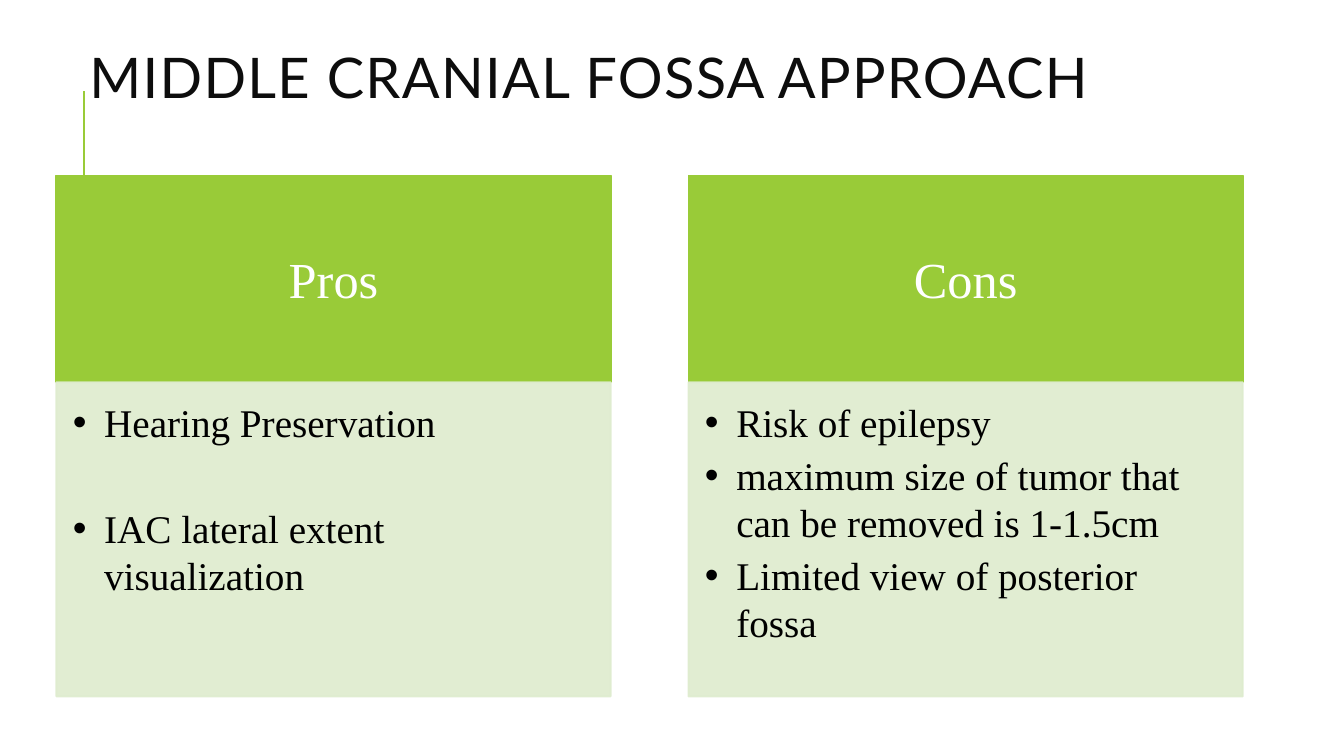
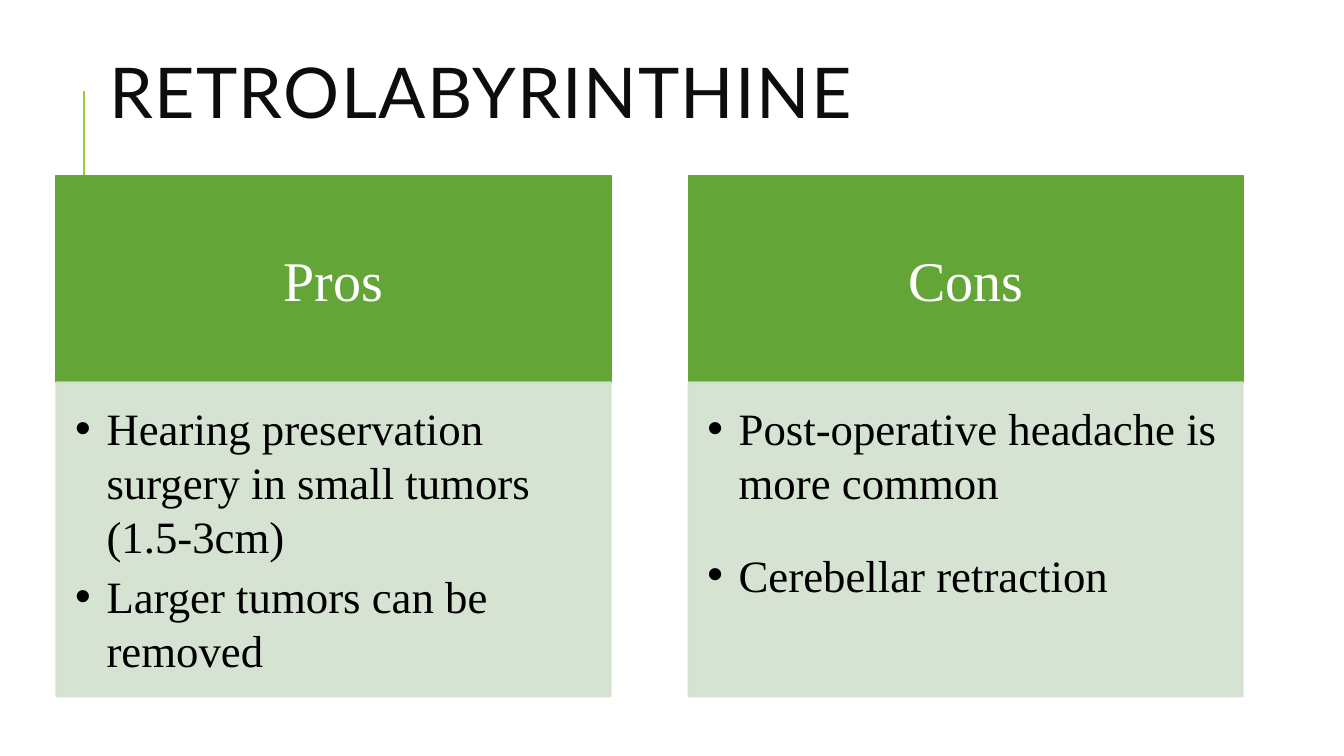
from dataclasses import dataclass

from lxml.etree import SubElement
from pptx import Presentation
from pptx.dml.color import RGBColor
from pptx.enum.shapes import MSO_CONNECTOR as Connector
from pptx.enum.text import MSO_ANCHOR as Anchor, MSO_AUTO_SIZE as AutoSize, PP_ALIGN as Align
from pptx.oxml.ns import qn
from pptx.util import Cm, Pt

LIME = RGBColor(0x99, 0xCB, 0x38)
PALE_LIME = RGBColor(0xDE, 0xEC, 0xCE)
GREEN = RGBColor(0x63, 0xA5, 0x37)
PALE_GREEN = RGBColor(0xD3, 0xE1, 0xCE)
WHITE = RGBColor(0xFF, 0xFF, 0xFF)
BLACK = RGBColor(0, 0, 0)
TITLE_INK = RGBColor(0x0D, 0x0D, 0x0D)

TITLE_FONT = "Lato"
TEXT_FONT = "Times New Roman"
COMPARISON_LAYOUT = 4

PANEL_LEFT, PANEL_STEP, PANEL_WIDTH = Cm(1.42), Cm(15.93), Cm(13.97)
HEAD_TOP, HEAD_HEIGHT, LIST_HEIGHT = Cm(4.42), Cm(5.21), Cm(7.92)
TITLE_WIDTH, TITLE_HEIGHT = Cm(27), Cm(4.17)
BULLET_INDENT = Cm(0.79)
HEAD_MARGINS = (0.56, 0.32, 0.56, 0.32)
LIST_MARGINS = (0.42, 0.42, 0.56, 0.63)


@dataclass(frozen=True)
class Item:
    text: str
    before: float = 0


@dataclass(frozen=True)
class Panel:
    heading: str
    items: tuple[Item, ...]


@dataclass(frozen=True)
class Approach:
    title: str
    title_left: Cm
    title_top: Cm
    title_size: int
    head_size: int
    list_size: int
    color: RGBColor
    pale: RGBColor
    panels: tuple[Panel, ...]


APPROACHES = (
    Approach(
        "MIDDLE CRANIAL FOSSA APPROACH", Cm(2), Cm(0), 40, 36, 28, LIME, PALE_LIME,
        (
            Panel("Pros", (
                Item("Hearing Preservation"),
                Item("IAC lateral extent visualization", before=37.8),
            )),
            Panel("Cons", (
                Item("Risk of epilepsy"),
                Item("maximum size of tumor that can be removed is 1-1.5cm"),
                Item("Limited view of posterior fossa"),
            )),
        ),
    ),
    Approach(
        "RETROLABYRINTHINE", Cm(2.5), Cm(0.4), 50, 40, 32, GREEN, PALE_GREEN,
        (
            Panel("Pros", (
                Item("Hearing preservation surgery in small tumors (1.5-3cm)"),
                Item("Larger tumors can be removed"),
            )),
            Panel("Cons", (
                Item("Post-operative headache is more common"),
                Item("Cerebellar retraction", before=23),
            )),
        ),
    ),
)


def write(p, text: str, *, size: float, color: RGBColor, font: str = TEXT_FONT,
          align=Align.LEFT, leading=None, before: float = 0, after: float = 0,
          tracking: int = 0, bullet: bool = False) -> None:
    p.alignment = align
    p.line_spacing = leading or Pt(size * 1.2)
    p.space_before, p.space_after = Pt(before), Pt(after)
    if bullet:
        pPr = p._p.get_or_add_pPr()
        pPr.set("marL", str(BULLET_INDENT))
        pPr.set("indent", str(-BULLET_INDENT))
        SubElement(pPr, qn("a:buChar")).set("char", "•")
    r = p.add_run()
    r.text = text
    r.font.name, r.font.size, r.font.bold = font, Pt(size), False
    r.font.color.rgb = color
    if tracking:
        r._r.get_or_add_rPr().set("spc", str(tracking))


def place(sp, left: int, top: int, width: int, height: int, anchor):
    sp.left, sp.top, sp.width, sp.height = left, top, width, height
    tf = sp.text_frame
    tf.word_wrap, tf.auto_size, tf.vertical_anchor = True, AutoSize.NONE, anchor
    return tf


def set_margins(tf, size: int, ems: tuple[float, ...]) -> None:
    tf.margin_left, tf.margin_top, tf.margin_right, tf.margin_bottom = (
        Pt(size * em) for em in ems)


def paint(sp, color: RGBColor, opacity: int = 100) -> None:
    sp.line.width = Pt(1.25)
    for fill in (sp.fill, sp.line.fill):
        fill.solid()
        fill.fore_color.rgb = color
    if opacity < 100:
        for clr in sp._element.spPr.iter(qn("a:srgbClr")):
            SubElement(clr, qn("a:alpha")).set("val", str(opacity * 1000))


def add_accent_line(s) -> None:
    line = s.shapes.add_connector(Connector.STRAIGHT, Cm(2.12), Cm(4.83), Cm(2.12), Cm(2.29))
    line.line.color.rgb, line.line.width = LIME, Pt(1.5)
    SubElement(line._element.spPr, qn("a:effectLst"))
    s.shapes._spTree.insert(2, line._element)


def fill_panel(head, body, panel: Panel, left: int, a: Approach) -> None:
    tf = place(head, left, HEAD_TOP, PANEL_WIDTH, HEAD_HEIGHT, Anchor.MIDDLE)
    set_margins(tf, a.head_size, HEAD_MARGINS)
    paint(head, a.color)
    write(tf.paragraphs[0], panel.heading, size=a.head_size, color=WHITE, align=Align.CENTER)

    tf = place(body, left, HEAD_TOP + HEAD_HEIGHT, PANEL_WIDTH, LIST_HEIGHT, Anchor.TOP)
    set_margins(tf, a.list_size, LIST_MARGINS)
    paint(body, a.pale, opacity=90)
    for i, item in enumerate(panel.items):
        p = tf.add_paragraph() if i else tf.paragraphs[0]
        write(p, item.text, size=a.list_size, color=BLACK, before=item.before,
              after=a.list_size * 0.15, bullet=True)


def add_approach(prs, a: Approach) -> None:
    s = prs.slides.add_slide(prs.slide_layouts[COMPARISON_LAYOUT])
    add_accent_line(s)
    title, *boxes = s.placeholders
    tf = place(title, a.title_left, a.title_top, TITLE_WIDTH, TITLE_HEIGHT, Anchor.MIDDLE)
    write(tf.paragraphs[0], a.title, size=a.title_size, color=TITLE_INK, font=TITLE_FONT,
          leading=0.8, tracking=100)
    for i, (head, body, panel) in enumerate(zip(boxes[::2], boxes[1::2], a.panels)):
        fill_panel(head, body, panel, PANEL_LEFT + i * PANEL_STEP, a)


def main() -> None:
    prs = Presentation()
    prs.slide_width, prs.slide_height = Cm(33.87), Cm(19.05)
    for a in APPROACHES:
        add_approach(prs, a)
    prs.save("out.pptx")


if __name__ == "__main__":
    main()
